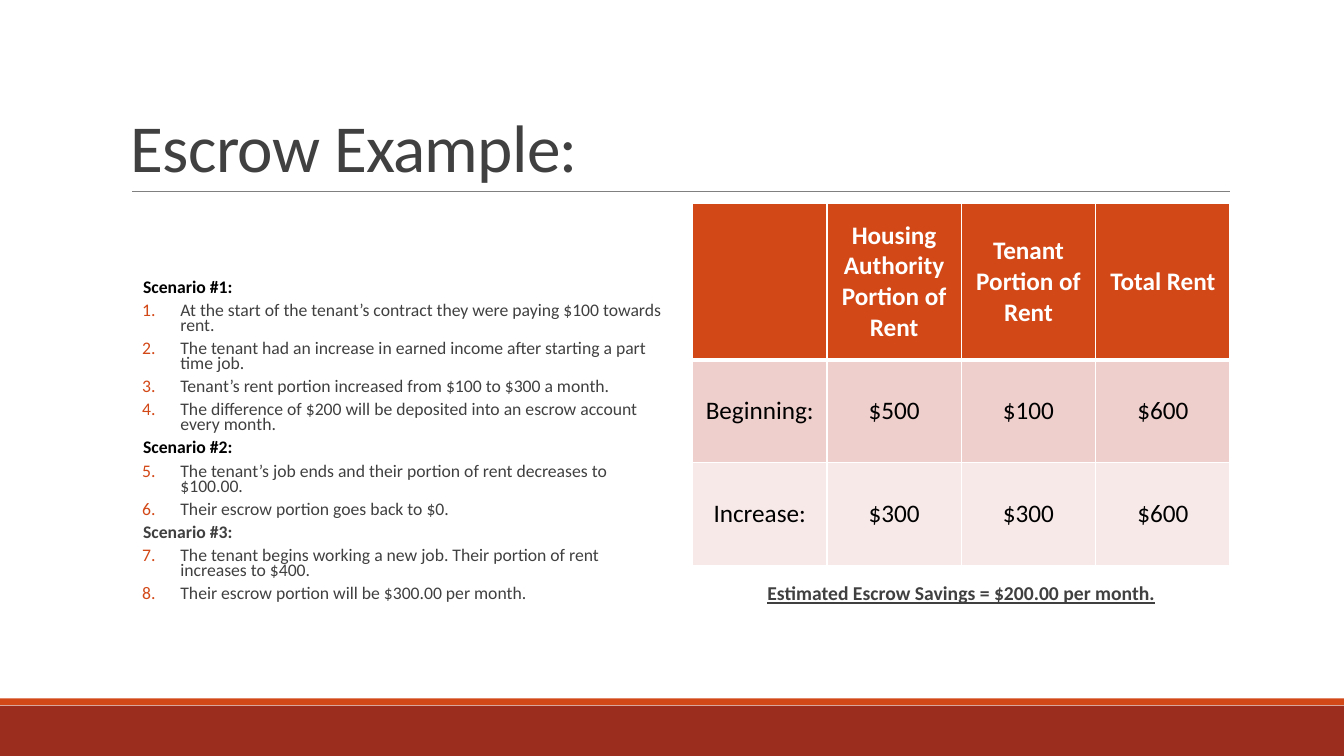
from dataclasses import dataclass

from lxml import etree
from pptx import Presentation
from pptx.dml.color import RGBColor
from pptx.enum.shapes import MSO_CONNECTOR, MSO_SHAPE
from pptx.enum.text import MSO_ANCHOR, PP_ALIGN
from pptx.oxml.ns import qn
from pptx.util import Inches, Pt

STRAIGHT = MSO_CONNECTOR.STRAIGHT
RECTANGLE = MSO_SHAPE.RECTANGLE
BOTTOM, MIDDLE = MSO_ANCHOR.BOTTOM, MSO_ANCHOR.MIDDLE
LEFT, CENTER = PP_ALIGN.LEFT, PP_ALIGN.CENTER
SLIDE_WIDTH, SLIDE_HEIGHT = Inches(13.333), Inches(7.5)


@dataclass(frozen=True)
class Theme:
    """Colours, font and type sizes of the slide."""
    font: str = "Calibri"
    brick: str = "9B2D1F"
    orange: str = "D34817"
    rose: str = "EFCFCC"
    blush: str = "F7E9E8"
    white: str = "FFFFFF"
    black: str = "000000"
    ink: str = "404040"
    rule: str = "808080"
    title_size: float = 48
    table_size: float = 18
    note_size: float = 14
    list_size: float = 12.6


THEME = Theme()

SCENARIOS = [
    ("Scenario #1:", THEME.black, [
        "At the start of the tenant’s contract they were paying $100 towards rent.",
        "The tenant had an increase in earned income after starting a part time job.",
        "Tenant’s rent portion increased from $100 to $300 a month.",
        "The difference of $200 will be deposited into an escrow account every month.",
    ]),
    ("Scenario #2:", THEME.black, [
        "The tenant’s job ends and their portion of rent decreases to $100.00.",
        "Their escrow portion goes back to $0.",
    ]),
    ("Scenario #3:", THEME.ink, [
        "The tenant begins working a new job. Their portion of rent increases to $400.",
        "Their escrow portion will be $300.00 per month.",
    ]),
]

RENT_ROWS = [
    ["", "Housing Authority Portion of Rent", "Tenant Portion of Rent", "Total Rent"],
    ["Beginning:", "$500", "$100", "$600"],
    ["Increase:", "$300", "$300", "$600"],
]
ROW_SHARES = [20.67, 13.6, 13.6]
ROW_FILLS = [THEME.orange, THEME.rose, THEME.blush]


def across(share):
    """Turn a percentage of the slide width into a length."""
    return int(SLIDE_WIDTH * share / 100)


def down(share):
    """Turn a percentage of the slide height into a length."""
    return int(SLIDE_HEIGHT * share / 100)


def area(left, top, width, height):
    """Turn percentages of the slide into a position and size."""
    return across(left), down(top), across(width), down(height)


def add_run(paragraph, wording, size, color, bold=False):
    """Add one styled run to a paragraph and return it."""
    run = paragraph.add_run()
    run.text = wording
    run.font.name = THEME.font
    run.font.size = Pt(size)
    run.font.bold = bold
    run.font.color.rgb = RGBColor.from_string(color)
    return run


def add_band(slide, place, color):
    """Add a plain coloured band."""
    band = slide.shapes.add_shape(RECTANGLE, *place)
    band.shadow.inherit = False
    band.fill.solid()
    band.fill.fore_color.rgb = RGBColor.from_string(color)
    band.line.fill.background()


def add_rule(slide, start, end, level):
    """Add the thin horizontal rule under the title."""
    rule = slide.shapes.add_connector(
        STRAIGHT, across(start), down(level), across(end), down(level))
    rule.line.color.rgb = RGBColor.from_string(THEME.rule)
    rule.line.width = Pt(0.5)
    etree.SubElement(rule.line._get_or_add_ln().getparent(), qn("a:effectLst"))


def add_text_frame(slide, place, anchor, side_inset=0.0):
    """Add a wrapping text box and return its frame."""
    frame = slide.shapes.add_textbox(*place).text_frame
    frame.word_wrap = True
    frame.vertical_anchor = anchor
    frame.margin_left = frame.margin_right = Inches(side_inset)
    return frame


def add_title(slide, place, wording):
    """Add the slide title."""
    paragraph = add_text_frame(slide, place, BOTTOM, 0.1).paragraphs[0]
    paragraph.line_spacing = 0.85
    run = add_run(paragraph, wording, THEME.title_size, THEME.ink)
    run.font._element.set("spc", "-50")


def set_indent(paragraph, margin, hanging, first_number=None):
    """Indent a paragraph and number it when a first number is given."""
    props = paragraph._p.get_or_add_pPr()
    props.set("marL", str(Inches(margin)))
    props.set("indent", str(-Inches(hanging)))
    if first_number:
        color = etree.SubElement(props, qn("a:buClr"))
        etree.SubElement(color, qn("a:srgbClr"), val=THEME.orange)
        etree.SubElement(props, qn("a:buFont"), typeface="+mj-lt")
        etree.SubElement(props, qn("a:buAutoNum"), type="arabicPeriod",
                         startAt=str(first_number))


def add_scenarios(slide, place):
    """Add the scenario headings with their continuously numbered steps."""
    frame = add_text_frame(slide, place, MIDDLE)
    first_number = 1

    def add_entry(wording, color, bold, margin, hanging, number=None):
        """Add one heading or step."""
        unused = not frame.paragraphs[0].runs
        paragraph = frame.paragraphs[0] if unused else frame.add_paragraph()
        paragraph.alignment = LEFT
        paragraph.line_spacing = 0.7
        paragraph.space_before, paragraph.space_after = Pt(2), Pt(4)
        set_indent(paragraph, margin, hanging, number)
        add_run(paragraph, wording, THEME.list_size, color, bold)

    for heading, heading_color, steps in SCENARIOS:
        add_entry(heading, heading_color, True, 0.22, 0)
        for step in steps:
            add_entry(step, THEME.ink, False, 0.59, 0.38, first_number)
        first_number += len(steps)


def set_borders(cell, top, bottom):
    """Draw white cell borders with the given top and bottom widths."""
    props = cell._tc.get_or_add_tcPr()
    sides = [("a:lnL", 1), ("a:lnR", 1), ("a:lnT", top), ("a:lnB", bottom)]
    for position, (side, width) in enumerate(sides):
        border = etree.Element(qn(side), w=str(Pt(width)))
        fill = etree.SubElement(border, qn("a:solidFill"))
        etree.SubElement(fill, qn("a:srgbClr"), val=THEME.white)
        props.insert(position, border)


def add_rent_table(slide, place):
    """Add the table of rent portions."""
    table = slide.shapes.add_table(len(RENT_ROWS), len(RENT_ROWS[0]), *place).table
    for row_index, labels in enumerate(RENT_ROWS):
        header = row_index == 0
        table.rows[row_index].height = down(ROW_SHARES[row_index])
        for column_index, label in enumerate(labels):
            cell = table.cell(row_index, column_index)
            cell.vertical_anchor = MIDDLE
            cell.fill.solid()
            cell.fill.fore_color.rgb = RGBColor.from_string(ROW_FILLS[row_index])
            set_borders(cell, 3 if row_index == 1 else 1, 3 if header else 1)
            paragraph = cell.text_frame.paragraphs[0]
            paragraph.alignment = CENTER
            if label:
                add_run(paragraph, label, THEME.table_size,
                        THEME.white if header else THEME.black, header)


def add_savings_note(slide, place, wording):
    """Add the underlined note below the table."""
    paragraph = add_text_frame(slide, place, MIDDLE).paragraphs[0]
    paragraph.alignment = CENTER
    add_run(paragraph, wording, THEME.note_size, THEME.ink, True).font.underline = True


def main():
    """Build the slide and save it."""
    deck = Presentation()
    deck.slide_width, deck.slide_height = SLIDE_WIDTH, SLIDE_HEIGHT
    slide = deck.slides.add_slide(deck.slide_layouts[6])
    add_band(slide, area(0, 93.33, 100, 6.67), THEME.brick)
    add_band(slide, area(0, 92.4, 100, 0.88), THEME.orange)
    add_rule(slide, 9.83, 91.55, 25.33)
    add_title(slide, area(9, 4.13, 82.5, 21.2), "Escrow Example:")
    add_scenarios(slide, area(9, 33.87, 40.5, 49.2))
    add_rent_table(slide, area(51.53, 26.93, 40, sum(ROW_SHARES)))
    add_savings_note(slide, area(51.53, 76, 40, 4.8),
                     "Estimated Escrow Savings = $200.00 per month.")
    deck.save("out.pptx")


if __name__ == "__main__":
    main()
